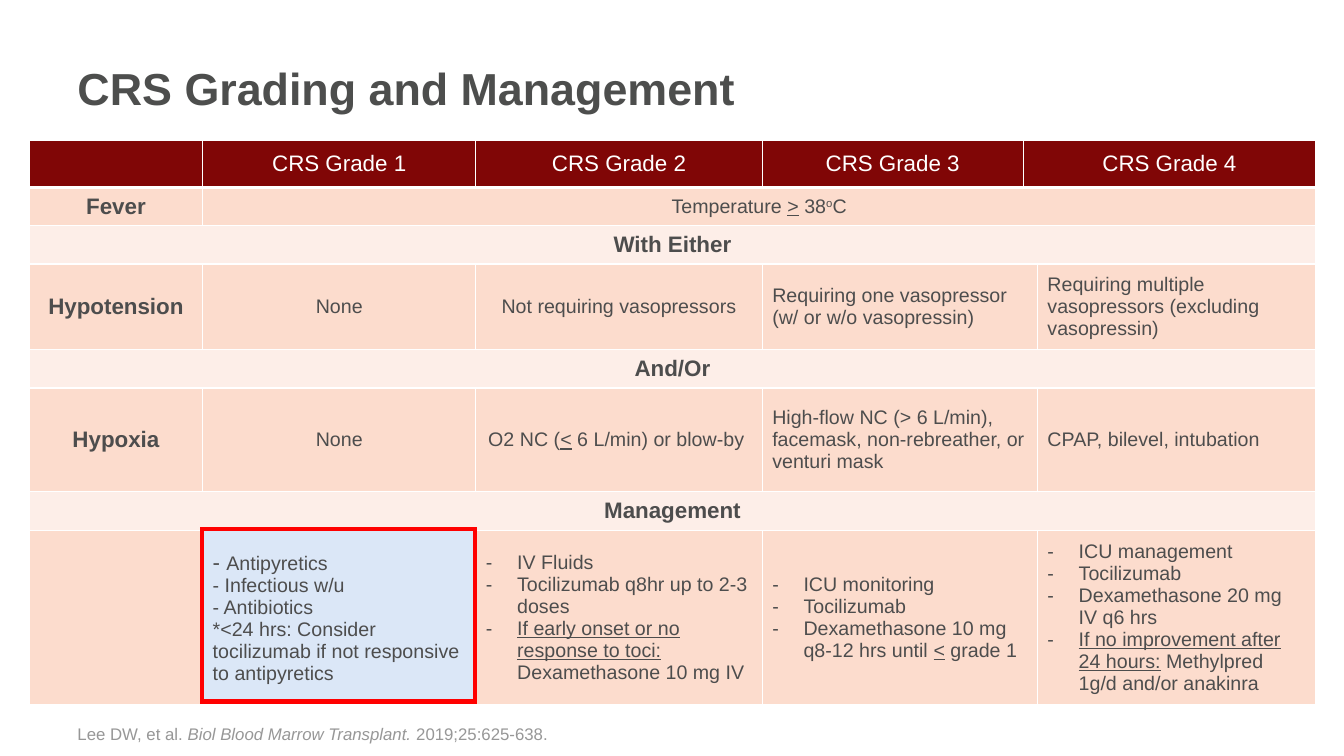
from lxml.etree import SubElement
from pptx import Presentation
from pptx.dml.color import RGBColor
from pptx.enum.shapes import MSO_SHAPE as Shape
from pptx.enum.text import MSO_ANCHOR as Anchor, PP_ALIGN as Align
from pptx.oxml.ns import qn
from pptx.util import Inches, Pt

TITLE_GRAY = RGBColor(0x4D, 0x4E, 0x4D)
BODY_GRAY = RGBColor(0x4D, 0x4D, 0x4D)
CITATION_GRAY = RGBColor(0x97, 0x97, 0x97)
WHITE = RGBColor(0xFF, 0xFF, 0xFF)
MAROON = RGBColor(0x80, 0x06, 0x06)
PEACH = RGBColor(0xFC, 0xDC, 0xCD)
PALE_PEACH = RGBColor(0xFD, 0xEE, 0xE8)
PALE_BLUE = RGBColor(0xDB, 0xE7, 0xF7)
RED = RGBColor(0xFF, 0x00, 0x00)

FONT = "Arial"
TEXT_LEFT, TEXT_WIDTH = 0.67, 11.75
TABLE_LEFT, TABLE_TOP = 0.29, 1.39
COLUMNS = [1.72, 2.71, 2.84, 2.59, 0.14, 2.76]
ROWS = [0.47, 0.38, 0.38, 0.85, 0.38, 1.03, 0.38, 1.69]
HEADER_BORDERS = {"a:lnL": 1, "a:lnR": 1, "a:lnT": 1, "a:lnB": 3}

UNDERLINE, SUPERSCRIPT, ITALIC, LARGE = "underline", "superscript", "italic", "large"

HEADINGS = {1: "CRS Grade 1", 2: "CRS Grade 2", 3: "CRS Grade 3", 4: "CRS Grade 4"}
BANDS = {2: "With Either", 4: "And/Or", 6: "Management"}
LABELS = {1: "Fever", 3: "Hypotension", 5: "Hypoxia"}
TEMPERATURE = ["Temperature ", (">", UNDERLINE), " 38", ("o", SUPERSCRIPT), "C"]
CRITERIA = {
    (3, 1): ["None"],
    (3, 2): ["Not requiring vasopressors"],
    (3, 3): ["Requiring one vasopressor (w/ or w/o vasopressin)"],
    (3, 5): ["Requiring multiple vasopressors (excluding vasopressin)"],
    (5, 1): ["None"],
    (5, 2): ["O2 NC (", ("<", UNDERLINE), " 6 L/min) or blow-by "],
    (5, 3): ["High-flow NC (> 6 L/min), facemask, non-rebreather, or venturi mask"],
    (5, 5): ["CPAP, bilevel, intubation"],
}
GRADE_1_CARE = [
    [("- ", LARGE), "Antipyretics"],
    ["- Infectious w/u"],
    ["- Antibiotics"],
    ["*<24 hrs: Consider tocilizumab if not responsive to antipyretics"],
]
BULLETED_CARE = {
    2: [
        ["IV Fluids"],
        ["Tocilizumab q8hr up to 2-3 doses"],
        [("If early onset or no response to toci:", UNDERLINE), " Dexamethasone 10 mg IV"],
    ],
    3: [
        ["ICU monitoring"],
        ["Tocilizumab"],
        ["Dexamethasone 10 mg q8-12 hrs until ", ("<", UNDERLINE), " grade 1"],
    ],
    5: [
        ["ICU management"],
        ["Tocilizumab"],
        ["Dexamethasone 20 mg IV q6 hrs"],
        [("If no improvement after 24 hours:", UNDERLINE), " Methylpred 1g/d and/or anakinra"],
    ],
}


def add_run(paragraph, text, style=None):
    """Append a run with an optional character style."""
    run = paragraph.add_run()
    run.text = text
    if style == UNDERLINE:
        run.font.underline = True
    elif style == ITALIC:
        run.font.italic = True
    elif style == LARGE:
        run.font.size = Pt(16)
    elif style == SUPERSCRIPT:
        run.font._element.set("baseline", "30000")


def add_dash(paragraph):
    """Give a paragraph a dash bullet with a hanging indent."""
    properties = paragraph._p.get_or_add_pPr()
    properties.set("marL", str(Inches(0.31)))
    properties.set("indent", str(-Inches(0.31)))
    SubElement(properties, qn("a:buFont"), typeface=FONT)
    SubElement(properties, qn("a:buChar"), char="-")


def write(frame, paragraphs, size, color, bold=False, align=Align.LEFT, dashed=False):
    """Fill a text frame with paragraphs, each a list of runs."""
    for index, runs in enumerate(paragraphs):
        paragraph = frame.add_paragraph() if index else frame.paragraphs[0]
        paragraph.alignment = align
        if dashed:
            add_dash(paragraph)
        font = paragraph.font
        font.name, font.size, font.bold = FONT, Pt(size), bold
        font.color.rgb = color
        for run in runs:
            add_run(paragraph, *((run,) if isinstance(run, str) else run))


def add_text(slide, top, height, runs, size, color, anchor, bold=False):
    """Add a text box on the slide's text column."""
    box = slide.shapes.add_textbox(
        Inches(TEXT_LEFT), Inches(top), Inches(TEXT_WIDTH), Inches(height))
    box.text_frame.word_wrap = True
    box.text_frame.vertical_anchor = anchor
    write(box.text_frame, [runs], size, color, bold)


def set_fill(cell, color):
    """Fill a table cell and centre its text vertically."""
    cell.fill.solid()
    cell.fill.fore_color.rgb = color
    cell.vertical_anchor = Anchor.MIDDLE


def set_header_borders(cell):
    """Draw white borders with a heavier bottom edge."""
    properties = cell._tc.get_or_add_tcPr()
    for index, (tag, width) in enumerate(HEADER_BORDERS.items()):
        line = SubElement(properties, qn(tag), w=str(Pt(width)))
        fill = SubElement(line, qn("a:solidFill"))
        SubElement(fill, qn("a:srgbClr"), val=str(WHITE))
        properties.insert(index, line)


def add_grading_table(slide):
    """Add the table frame with its sizes, fills and merged cells."""
    table = slide.shapes.add_table(
        len(ROWS), len(COLUMNS), Inches(TABLE_LEFT), Inches(TABLE_TOP),
        Inches(sum(COLUMNS)), Inches(sum(ROWS))).table
    for column, width in zip(table.columns, COLUMNS):
        column.width = Inches(width)
    for index, height in enumerate(ROWS):
        table.rows[index].height = Inches(height)
        for cell in table.rows[index].cells:
            set_fill(cell, MAROON if index == 0 else PALE_PEACH if index in BANDS else PEACH)
            if index == 0:
                set_header_borders(cell)
    set_fill(table.cell(7, 1), PALE_BLUE)
    spans = [(0, 4, 5), (1, 1, 5), (3, 3, 4), (5, 3, 4), (7, 3, 4)]
    for row, first, last in spans + [(row, 0, 5) for row in BANDS]:
        table.cell(row, first).merge(table.cell(row, last))
    return table


def fill_grading_table(table):
    """Write the headings, criteria and management steps."""
    for column, text in HEADINGS.items():
        write(table.cell(0, column).text_frame, [[text]], 16, WHITE, align=Align.CENTER)
    for row, text in (BANDS | LABELS).items():
        write(table.cell(row, 0).text_frame, [[text]], 16, BODY_GRAY, True, Align.CENTER)
    write(table.cell(1, 1).text_frame, [TEMPERATURE], 14, BODY_GRAY, align=Align.CENTER)
    for (row, column), runs in CRITERIA.items():
        align = Align.CENTER if column < 3 else Align.LEFT
        write(table.cell(row, column).text_frame, [runs], 14, BODY_GRAY, align=align)
    write(table.cell(7, 1).text_frame, GRADE_1_CARE, 14, BODY_GRAY)
    for column, steps in BULLETED_CARE.items():
        write(table.cell(7, column).text_frame, steps, 14, BODY_GRAY, dashed=True)


def add_highlight(slide, row, column):
    """Outline one table cell in red with square corners."""
    frame = slide.shapes.add_shape(
        Shape.RECTANGLE, Inches(TABLE_LEFT + sum(COLUMNS[:column]) - 0.01),
        Inches(TABLE_TOP + sum(ROWS[:row]) - 0.01),
        Inches(COLUMNS[column]), Inches(ROWS[row] + 0.02))
    frame.shadow.inherit = False
    frame.fill.background()
    frame.line.color.rgb = RED
    frame.line.width = Pt(3)
    SubElement(frame.line._get_or_add_ln(), qn("a:miter"), lim="800000")


def main():
    """Build and save the CRS grading slide."""
    presentation = Presentation()
    presentation.slide_width, presentation.slide_height = Inches(13.33), Inches(7.5)
    slide = presentation.slides.add_slide(presentation.slide_layouts[6])
    add_text(slide, 0.22, 1.3, ["CRS Grading and Management"], 32, TITLE_GRAY,
             Anchor.MIDDLE, bold=True)
    citation = ["Lee DW, et al. ", ("Biol Blood Marrow Transplant. ", ITALIC),
                "2019;25:625-638."]
    add_text(slide, 6.95, 0.48, citation, 12, CITATION_GRAY, Anchor.BOTTOM)
    fill_grading_table(add_grading_table(slide))
    add_highlight(slide, 7, 1)
    presentation.save("out.pptx")


if __name__ == "__main__":
    main()
